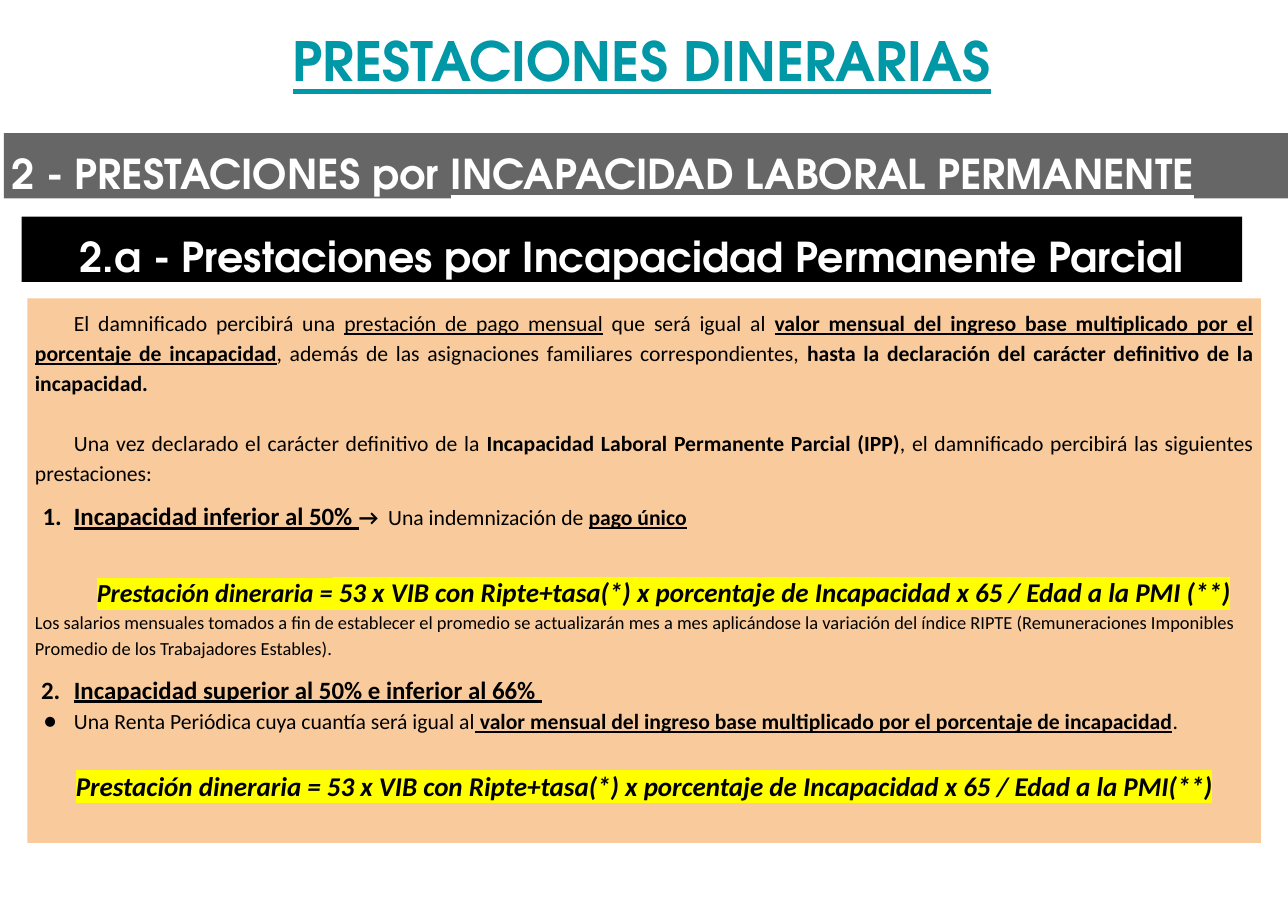
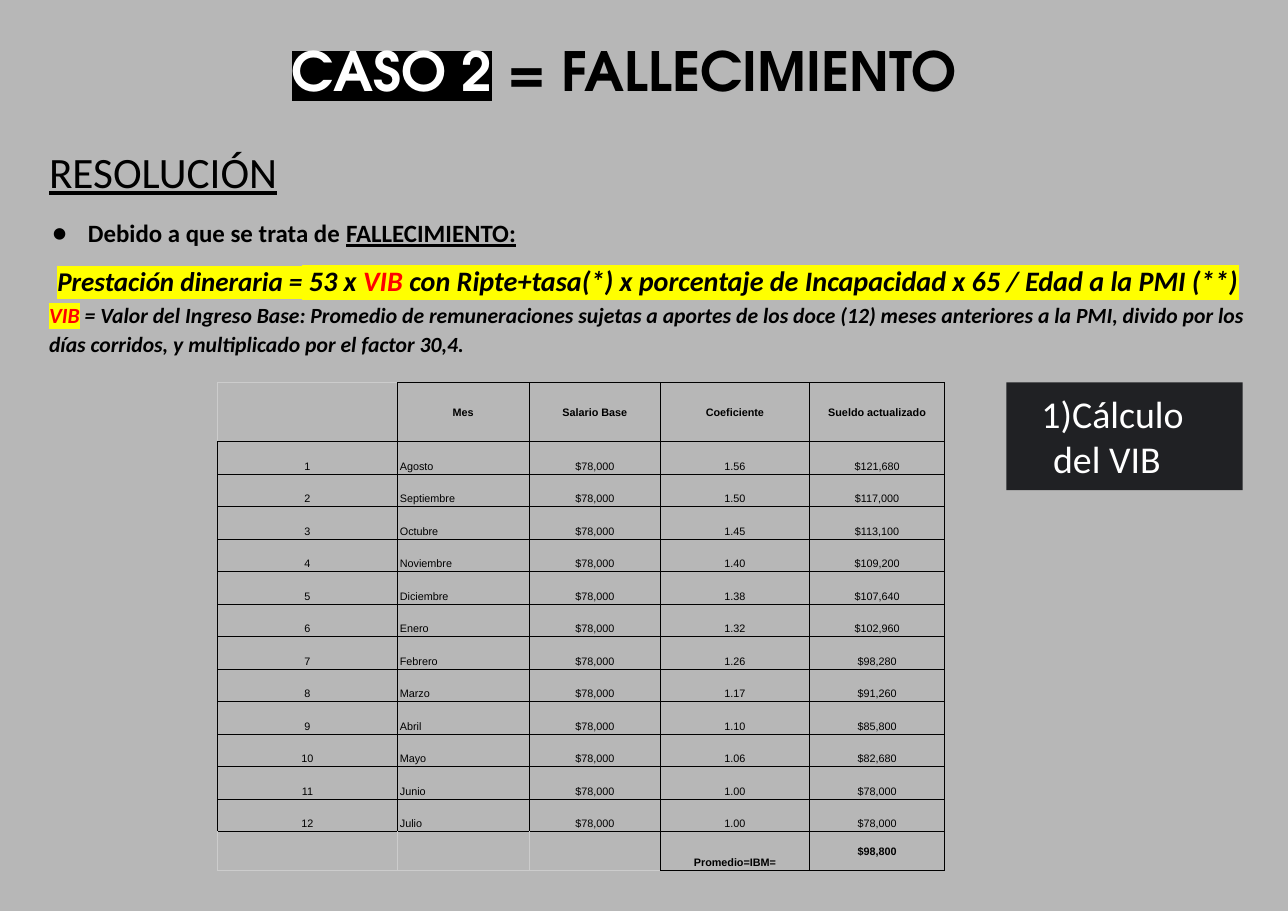
from lxml import etree
from pptx import Presentation
from pptx.dml.color import RGBColor
from pptx.enum import shapes, text
from pptx.oxml import ns
from pptx.util import Cm, Pt

WHITE = RGBColor(0xFF, 0xFF, 0xFF)
BLACK = RGBColor(0, 0, 0)
TEAL = RGBColor(0x00, 0x97, 0xA7)
GRAY = RGBColor(0x66, 0x66, 0x66)
PEACH = RGBColor(0xF9, 0xCB, 0x9C)
SILVER = RGBColor(0xB7, 0xB7, 0xB7)
CHARCOAL = RGBColor(0x20, 0x21, 0x24)
LIGHT = RGBColor(0xCC, 0xCC, 0xCC)
YELLOW = RGBColor(0xFF, 0xFF, 0x00)
RED = RGBColor(0xFF, 0x00, 0x00)

LEFT, CENTER, JUSTIFY = text.PP_ALIGN.LEFT, text.PP_ALIGN.CENTER, text.PP_ALIGN.JUSTIFY
TOP, MIDDLE, BOTTOM = text.MSO_ANCHOR.TOP, text.MSO_ANCHOR.MIDDLE, text.MSO_ANCHOR.BOTTOM

TITLE = dict(name="TeX Gyre Adventor", size=Pt(50), bold=True, color=BLACK)
BAND = {**TITLE, "size": Pt(38), "color": WHITE}
BODY = dict(name="Calibri", size=Pt(20), bold=False, color=BLACK)
CALLOUT = {**BODY, "size": Pt(35), "color": WHITE}
CELL = dict(name="Arial", size=Pt(10), bold=False, color=BLACK)

BOLD = dict(bold=True)
UNDER = dict(underline=True)
KEY = {**BOLD, **UNDER}
HEADING = {**KEY, "size": Pt(23)}
FORMULA = dict(bold=True, italic=True, highlight=YELLOW, size=Pt(25))
FORMULA_SMALL = {**FORMULA, "size": Pt(24)}
FORMULA_LARGE = {**FORMULA, "size": Pt(26)}
NOTE = dict(bold=True, italic=True)

TITLE_BOX = (0.71, 0.64, 39.8, 2.64)
SECTION_BOX = (0.13, 4.34, 42, 2.13)
SUBSECTION_BOX = (0.71, 7.06, 39.8, 2.13)
BENEFITS_BOX = (0.89, 9.73, 40.23, 17.75)
RESOLUTION_BOX = (1.35, 4.24, 39.57, 9.55)
CALLOUT_BOX = (32.82, 12.47, 7.7, 3.51)

FIRST_LINE = dict(align=JUSTIFY, indent=1.27)
BASE_VALUE = "valor mensual del ingreso base multiplicado por el porcentaje de incapacidad"
FORMULA_TEXT = "con Ripte+tasa(*) x porcentaje de Incapacidad x 65 / Edad a la PMI"

BENEFITS_TITLE = [
    (dict(align=CENTER, margin=0.64, before=3, spacing=1.0),
     [("PRESTACIONES DINERARIAS", dict(color=TEAL, underline=True))]),
]
SECTION = [
    ({}, [("2 - PRESTACIONES por ", {}), ("INCAPACIDAD LABORAL PERMANENTE", UNDER)]),
]
SUBSECTION = [
    (dict(align=CENTER),
     [("2.a - Prestaciones por Incapacidad Permanente Parcial", {})]),
]
BENEFITS = [
    (FIRST_LINE, [
        ("El damnificado percibirá una ", {}),
        ("prestación de pago mensual", UNDER),
        (" que será igual al ", {}),
        (BASE_VALUE, KEY),
        (", además de las asignaciones familiares correspondientes, ", {}),
        ("hasta la declaración del carácter definitivo de la incapacidad.", BOLD)]),
    ({**FIRST_LINE, "before": 28}, [
        ("Una vez declarado el carácter definitivo de la", {}),
        (" Incapacidad Laboral Permanente Parcial (IPP)", BOLD),
        (", el damnificado percibirá las siguientes prestaciones:", {})]),
    (dict(align=JUSTIFY, margin=1.27, indent=-1.02, before=10, number=("arabicPeriod", 1)), [
        ("Incapacidad inferior al 50% ", HEADING),
        ("→  ", BOLD),
        ("Una indemnización de ", {}),
        ("pago único", KEY)]),
    (dict(align=CENTER, margin=1.27, before=37), [
        ("Prestación dineraria =", FORMULA_SMALL),
        (f" 53 x VIB {FORMULA_TEXT} (**)", FORMULA)]),
    ({}, [
        ("Los salarios mensuales tomados a fin de establecer el promedio se actualizarán "
         "mes a mes aplicándose la variación del índice RIPTE (Remuneraciones Imponibles "
         "Promedio de los Trabajadores Estables).", dict(size=Pt(17)))]),
    (dict(align=JUSTIFY, margin=1.27, indent=-1.07, before=10, number=("arabicPeriod", 2)), [
        ("Incapacidad superior al 50% e inferior al 66% ", HEADING)]),
    (dict(align=JUSTIFY, margin=1.27, indent=-0.99, bullet="●"), [
        ("Una Renta Periódica cuya cuantía será igual al", {}),
        (" " + BASE_VALUE, KEY),
        (". ", {})]),
    (dict(align=CENTER, before=28), [
        (f"Prestación dineraria = 53 x VIB {FORMULA_TEXT}(**)", FORMULA)]),
]

CASE_TITLE = [
    (dict(align=CENTER, after=15), [
        ("CASO 2", dict(color=WHITE, highlight=BLACK)),
        (" ", {}),
        ("= FALLECIMIENTO ", {})]),
]
RESOLUTION = [
    ({}, [("RESOLUCIÓN", dict(size=Pt(40), underline=True))]),
    (dict(align=JUSTIFY, margin=1.27, indent=-1.17, before=15, bullet="●"), [
        ("Debido a que se trata de ", dict(size=Pt(23), bold=True)),
        ("FALLECIMIENTO:", HEADING)]),
    (dict(align=CENTER, before=10), [
        ("Prestación dineraria =", FORMULA),
        (" 53 x ", FORMULA_LARGE),
        ("VIB ", {**FORMULA_LARGE, "color": RED}),
        (f"{FORMULA_TEXT} (**)", FORMULA_LARGE)]),
    ({}, [
        ("VIB", {**NOTE, "color": RED, "highlight": YELLOW}),
        (" = Valor del Ingreso Base: Promedio de remuneraciones sujetas a aportes de los "
         "doce (12) meses anteriores a la PMI, divido por los días corridos, y multiplicado "
         "por el factor 30,4.", NOTE)]),
]
VIB_CALLOUT = [
    (dict(margin=1.27, indent=-0.38, spacing=1.0, number=("arabicParenR", 1)),
     [("Cálculo del VIB", {})]),
]

SALARY = "$78,000"
MONTHS = [
    ("Agosto", "1.56", "$121,680"),
    ("Septiembre", "1.50", "$117,000"),
    ("Octubre", "1.45", "$113,100"),
    ("Noviembre", "1.40", "$109,200"),
    ("Diciembre", "1.38", "$107,640"),
    ("Enero", "1.32", "$102,960"),
    ("Febrero", "1.26", "$98,280"),
    ("Marzo", "1.17", "$91,260"),
    ("Abril", "1.10", "$85,800"),
    ("Mayo", "1.06", "$82,680"),
    ("Junio", "1.00", "$78,000"),
    ("Julio", "1.00", "$78,000"),
]
ROWS = (
    [("", "Mes", "Salario Base", "Coeficiente", "Sueldo actualizado")]
    + [(str(number), month, SALARY, factor, updated)
       for number, (month, factor, updated) in enumerate(MONTHS, 1)]
    + [("", "", "", "Promedio=IBM=", "$98,800")]
)
COLUMN_WIDTHS = (5.87, 4.29, 4.29, 4.85, 4.42)
ROW_HEIGHTS = [1.93] + [1.06] * len(MONTHS) + [1.27]
TABLE_LEFT, TABLE_TOP = 7.09, 12.47
SIDES = {"lnL": (0, -1), "lnR": (0, 1), "lnT": (-1, 0), "lnB": (1, 0)}


def add_element(parent, tag, **attributes):
    return etree.SubElement(parent, ns.qn(tag), attributes)


def format_run(run, style):
    for name, value in style.items():
        if name == "color":
            run.font.color.rgb = value
        elif name != "highlight":
            setattr(run.font, name, value)
    if "highlight" in style:
        properties = run.font._element
        highlight = add_element(properties, "a:highlight")
        add_element(highlight, "a:srgbClr", val=str(style["highlight"]))
        properties.find(ns.qn("a:solidFill")).addnext(highlight)


def format_paragraph(paragraph, layout, color):
    values = dict(
        alignment=layout.get("align", LEFT),
        line_spacing=layout.get("spacing", 1.15),
        space_before=Pt(layout.get("before", 0)),
        space_after=Pt(layout.get("after", 0)),
    )
    for name, value in values.items():
        setattr(paragraph, name, value)
    properties = paragraph._p.get_or_add_pPr()
    properties.set("marL", str(Cm(layout.get("margin", 0))))
    properties.set("indent", str(Cm(layout.get("indent", 0))))
    if "bullet" in layout or "number" in layout:
        add_element(add_element(properties, "a:buClr"), "a:srgbClr", val=str(color))
        add_element(properties, "a:buFont", typeface="Calibri")
    if "bullet" in layout:
        add_element(properties, "a:buChar", char=layout["bullet"])
    elif "number" in layout:
        kind, start = layout["number"]
        add_element(properties, "a:buAutoNum", type=kind, startAt=str(start))
    else:
        add_element(properties, "a:buNone")


def write(frame, paragraphs, style):
    for index, (layout, runs) in enumerate(paragraphs):
        paragraph = frame.add_paragraph() if index else frame.paragraphs[0]
        format_paragraph(paragraph, layout, style["color"])
        for words, changes in runs:
            run = paragraph.add_run()
            run.text = words
            format_run(run, {**style, **changes})


def add_text(slide, box, paragraphs, style, fill=None):
    place = [Cm(length) for length in box]
    if fill is None:
        shape = slide.shapes.add_textbox(*place)
    else:
        shape = slide.shapes.add_shape(shapes.MSO_SHAPE.RECTANGLE, *place)
        shape.shadow.inherit = False
        shape.fill.solid()
        shape.fill.fore_color.rgb = fill
        shape.line.fill.background()
    frame = shape.text_frame
    frame.word_wrap = True
    frame.vertical_anchor = TOP
    for side in ("left", "right", "top", "bottom"):
        setattr(frame, f"margin_{side}", Cm(0.25))
    write(frame, paragraphs, style)


def has_text(row, column):
    inside = 0 <= row < len(ROWS) and 0 <= column < len(COLUMN_WIDTHS)
    return inside and bool(ROWS[row][column])


def draw_borders(cell, row, column):
    properties = cell._tc.get_or_add_tcPr()
    for position, (side, (down, across)) in enumerate(SIDES.items()):
        dark = has_text(row, column) or has_text(row + down, column + across)
        line = add_element(properties, f"a:{side}", w=str(Pt(0.83)))
        fill = add_element(line, "a:solidFill")
        add_element(fill, "a:srgbClr", val=str(BLACK if dark else LIGHT))
        properties.insert(position, line)


def add_salary_table(slide):
    table = slide.shapes.add_table(
        len(ROWS), len(COLUMN_WIDTHS), Cm(TABLE_LEFT), Cm(TABLE_TOP),
        Cm(sum(COLUMN_WIDTHS)), Cm(sum(ROW_HEIGHTS))).table
    table.first_row = table.horz_banding = False
    for column, width in zip(table.columns, COLUMN_WIDTHS):
        column.width = Cm(width)
    last = len(ROWS) - 1
    for row, (values, height) in enumerate(zip(ROWS, ROW_HEIGHTS)):
        table.rows[row].height = Cm(height)
        for column, value in enumerate(values):
            cell = table.cell(row, column)
            cell.fill.background()
            draw_borders(cell, row, column)
            cell.margin_left = cell.margin_right = Cm(0.08)
            cell.margin_top = cell.margin_bottom = Cm(0.05)
            centered = row == 0 or (row, column) == (last, 4)
            cell.vertical_anchor = MIDDLE if centered else BOTTOM
            if value:
                month = column == 1 and row > 0
                layout = dict(align=LEFT if month else CENTER)
                changes = dict(bold=row in (0, last))
                write(cell.text_frame, [(layout, [(value, changes)])], CELL)


def add_slide(presentation, background, title):
    slide = presentation.slides.add_slide(presentation.slide_layouts[6])
    slide.background.fill.solid()
    slide.background.fill.fore_color.rgb = background
    add_text(slide, TITLE_BOX, title, TITLE)
    return slide


def main():
    presentation = Presentation()
    presentation.slide_width, presentation.slide_height = Cm(42), Cm(29.7)

    benefits = add_slide(presentation, WHITE, BENEFITS_TITLE)
    add_text(benefits, SECTION_BOX, SECTION, BAND, GRAY)
    add_text(benefits, SUBSECTION_BOX, SUBSECTION, BAND, BLACK)
    add_text(benefits, BENEFITS_BOX, BENEFITS, BODY, PEACH)

    case = add_slide(presentation, SILVER, CASE_TITLE)
    add_text(case, RESOLUTION_BOX, RESOLUTION, BODY)
    add_salary_table(case)
    add_text(case, CALLOUT_BOX, VIB_CALLOUT, CALLOUT, CHARCOAL)

    presentation.save("out.pptx")


if __name__ == "__main__":
    main()
